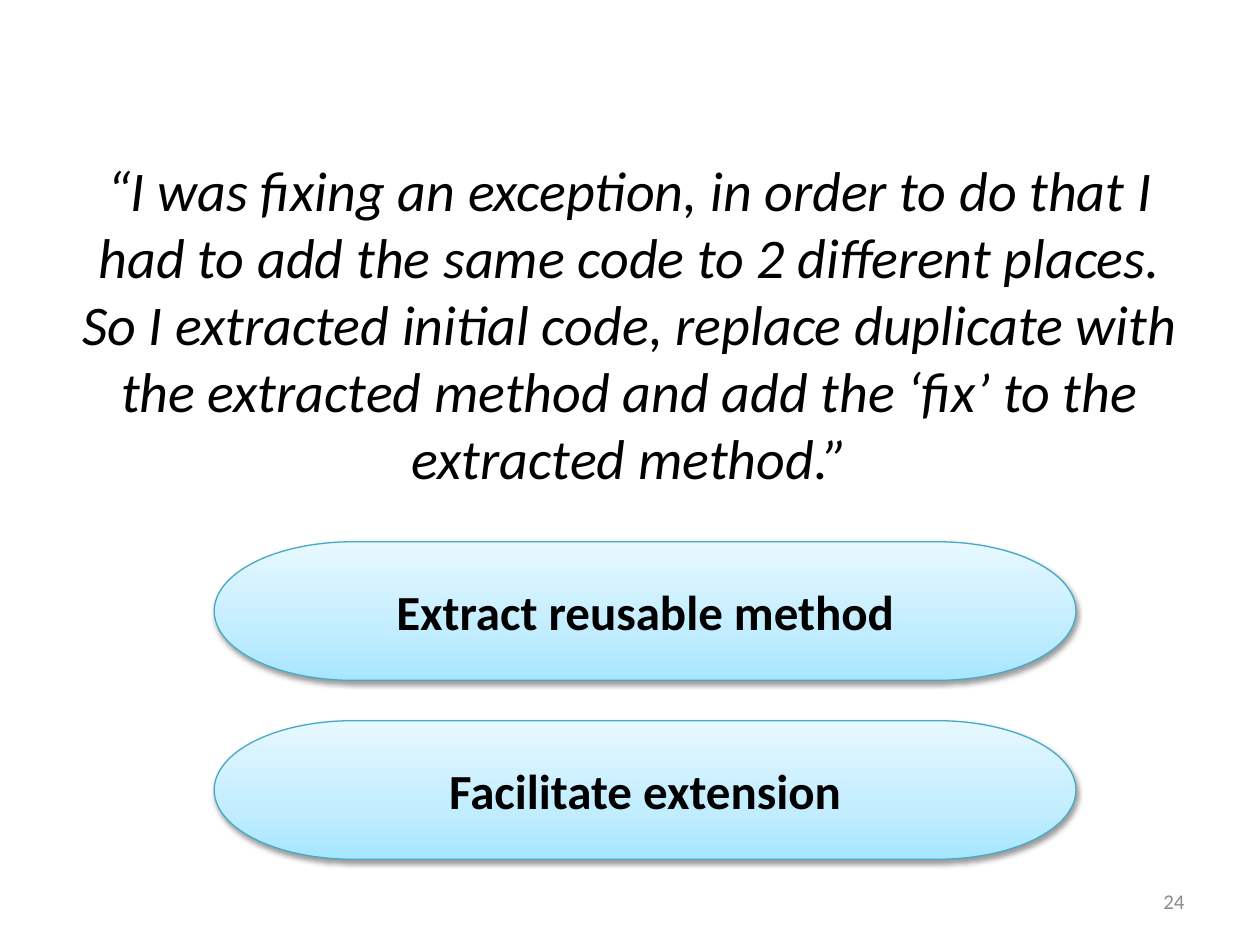
from copy import deepcopy
from dataclasses import dataclass

from lxml import etree
from pptx import Presentation
from pptx.dml.color import RGBColor
from pptx.enum.shapes import MSO_SHAPE
from pptx.enum.text import MSO_ANCHOR, PP_ALIGN
from pptx.oxml import parse_xml
from pptx.oxml.ns import nsdecls, qn
from pptx.util import Inches, Pt

TERMINATOR = MSO_SHAPE.FLOWCHART_TERMINATOR
MIDDLE = MSO_ANCHOR.MIDDLE
CENTER, RIGHT = PP_ALIGN.CENTER, PP_ALIGN.RIGHT

QUOTE = (
    "“I was fixing an exception, in order to do that I had to add the same code "
    "to 2 different places. So I extracted initial code, replace duplicate with "
    "the extracted method and add the ‘fix’ to the extracted method.”"
)
MOTIVATIONS = ["Extract reusable method", "Facilitate extension"]
PAGE = "24"


@dataclass(frozen=True)
class Theme:
    font: str = "Calibri"
    text: str = "000000"
    muted: str = "8C8C8C"
    line: str = "46AAC5"
    gradient: tuple = ((0, "A7E6FF"), (0.35, "C1EDFF"), (1, "E7F8FF"))
    quote_size: int = 32
    pill_size: int = 28
    page_size: int = 12


T = Theme()
W, H = 10, 7.5
MARGIN = 0.05 * W
PILL_LEFT, PILL_TOP, PILL_W, PILL_H, PILL_STEP = 1.7, 4.3, 6.84, 1.1, 1.42
PAGE_W, PAGE_H = 2.33, 0.4


def box(*lengths):
    return [Inches(v) for v in lengths]


def write(shape, text, size, color=T.text, align=CENTER, bold=False, italic=False):
    tf = shape.text_frame
    tf.word_wrap = True
    tf.vertical_anchor = MIDDLE
    p = tf.paragraphs[0]
    p.alignment = align
    r = p.add_run()
    r.text = text
    r.font.name, r.font.size = T.font, Pt(size)
    r.font.bold, r.font.italic = bold, italic
    r.font.color.rgb = RGBColor.from_string(color)
    return p


def add_quote(s):
    body = s.placeholders[1]
    body.left, body.top, body.width, body.height = box(MARGIN, 0.36, W - 2 * MARGIN, 4.41)
    p = write(body, QUOTE, T.quote_size, italic=True)
    p.space_before = Pt(12)
    pPr = p._p.get_or_add_pPr()
    pPr.set("marL", "0")
    pPr.set("indent", "0")
    etree.SubElement(pPr, qn("a:buNone"))


def add_pill(s, row, text):
    top = PILL_TOP + row * PILL_STEP
    sp = s.shapes.add_shape(TERMINATOR, *box(PILL_LEFT, top, PILL_W, PILL_H))
    sp.fill.gradient()
    sp.fill.gradient_angle = 90
    stops = sp._element.spPr.find(".//" + qn("a:gsLst"))
    stops.append(deepcopy(stops[0]))
    for stop, (position, color) in zip(sp.fill.gradient_stops, T.gradient):
        stop.position = position
        stop.color.rgb = RGBColor.from_string(color)
    sp.line.color.rgb = RGBColor.from_string(T.line)
    sp.line.width = Pt(0.75)
    sp.shadow.inherit = False
    sp._element.spPr.find(qn("a:effectLst")).append(parse_xml(
        f'<a:outerShdw {nsdecls("a")} blurRad="{Pt(3.1)}" dist="{Pt(1.6)}" '
        'dir="5400000" rotWithShape="0"><a:srgbClr val="000000">'
        '<a:alpha val="38000"/></a:srgbClr></a:outerShdw>'
    ))
    write(sp, text, T.pill_size, bold=True)


def main():
    prs = Presentation()
    prs.slide_width, prs.slide_height = box(W, H)
    s = prs.slides.add_slide(prs.slide_layouts[1])
    title = s.shapes.title._element
    title.getparent().remove(title)

    add_quote(s)
    for row, text in enumerate(MOTIVATIONS):
        add_pill(s, row, text)
    page = s.shapes.add_textbox(*box(W - MARGIN - PAGE_W, 6.95, PAGE_W, PAGE_H))
    write(page, PAGE, T.page_size, T.muted, RIGHT)
    prs.save("out.pptx")


if __name__ == "__main__":
    main()
